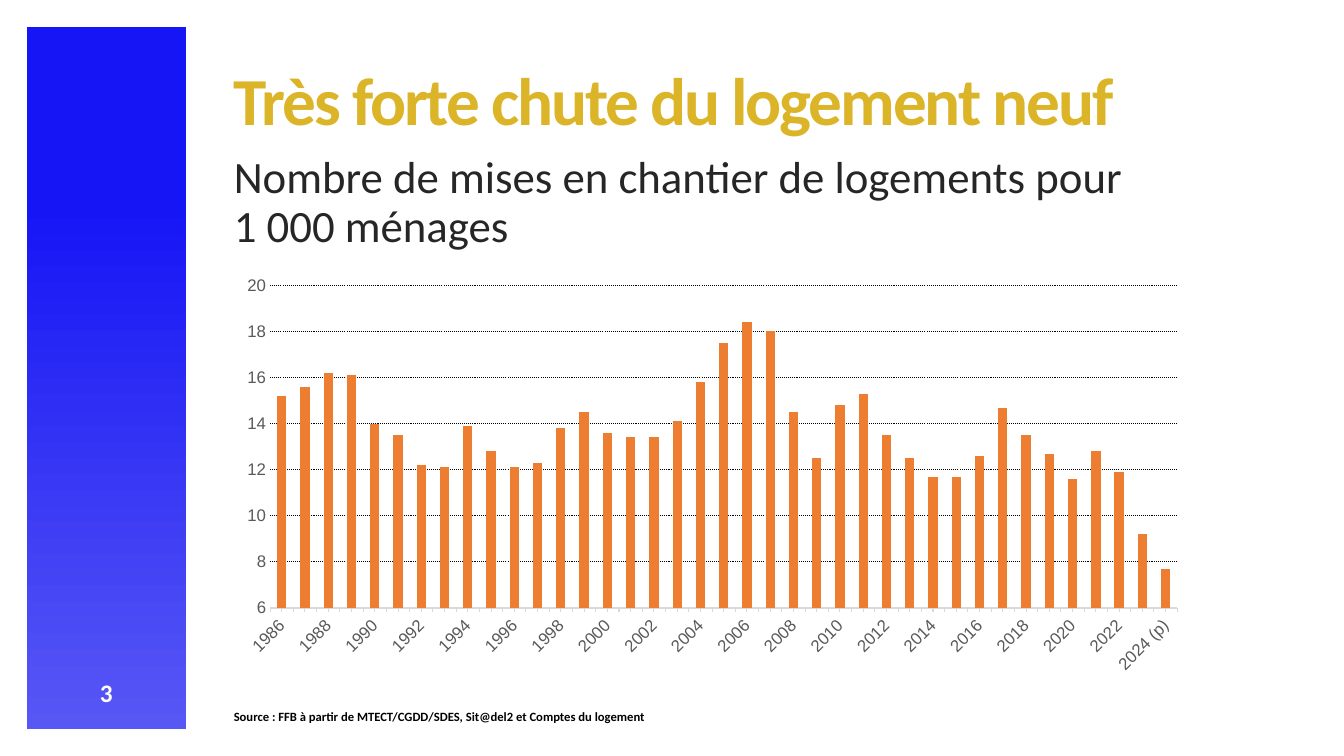
from pptx import Presentation
from pptx import util as u
from pptx.chart.data import CategoryChartData
from pptx.dml.color import RGBColor
from pptx.enum import chart as charts, dml, shapes, text
from pptx.oxml import parse_xml
from pptx.oxml.ns import nsdecls

PX = 9144  # EMU, 100 px to the inch

WHITE = RGBColor(0xFF, 0xFF, 0xFF)
BLACK = RGBColor(0x00, 0x00, 0x00)
BLUE = RGBColor(0x16, 0x15, 0xF5)
LIGHT_BLUE = RGBColor(0x57, 0x57, 0xF5)
GOLD = RGBColor(0xDB, 0xB4, 0x28)
INK = RGBColor(0x26, 0x26, 0x26)
GREY = RGBColor(0x59, 0x59, 0x59)
PALE_GREY = RGBColor(0xD9, 0xD9, 0xD9)
ORANGE = RGBColor(0xED, 0x7D, 0x31)

YEARS = [str(year) for year in range(1986, 2023)] + ["2023 (e)", "2024 (p)"]
STARTS = [
    15.2, 15.6, 16.2, 16.1, 14, 13.5, 12.2, 12.1, 13.9, 12.8,
    12.1, 12.3, 13.8, 14.5, 13.6, 13.4, 13.4, 14.1, 15.8, 17.5,
    18.4, 18, 14.5, 12.5, 14.8, 15.3, 13.5, 12.5, 11.7, 11.7,
    12.6, 14.7, 13.5, 12.7, 11.6, 12.8, 11.9, 9.2, 7.7,
]


def place(*lengths):
    return [u.Emu(length * PX) for length in lengths]


def add_text(page, wording, at, size, color, bold=False, spacing=0,
             line_spacing=0.9, align=text.PP_ALIGN.LEFT):
    box = page.shapes.add_textbox(*place(*at))
    box.text_frame.word_wrap = True
    para = box.text_frame.paragraphs[0]
    para.alignment = align
    para.line_spacing = line_spacing
    span = para.add_run()
    span.text = wording
    font = span.font
    font.name, font.size, font.bold = "Calibri", u.Pt(size), bold
    font.color.rgb = color
    if spacing:
        font._element.set("spc", str(int(spacing * 100)))


def add_gradient_band(page, at, top_color, bottom_color):
    band = page.shapes.add_shape(shapes.MSO_SHAPE.RECTANGLE, *place(*at))
    band.shadow.inherit = False
    band.line.fill.background()
    band.fill.gradient()
    band.fill.gradient_angle = 270
    stops = zip(band.fill.gradient_stops, (0.25, 1), (top_color, bottom_color))
    for stop, position, color in stops:
        stop.position = position
        stop.color.rgb = color


def style_axis(axis):
    axis.major_tick_mark = charts.XL_TICK_MARK.NONE
    font = axis.tick_labels.font
    font.name, font.size, font.color.rgb = "Arial", u.Pt(12), GREY


def set_plot_layout(chart, x, y, w, h):
    plot_area = chart._chartSpace.xpath("c:chart/c:plotArea")[0]
    for layout in plot_area.xpath("c:layout"):
        plot_area.remove(layout)
    sizes = "".join(f'<c:{name} val="{value}"/>'
                    for name, value in zip("xywh", (x, y, w, h)))
    plot_area.insert(0, parse_xml(
        f'<c:layout {nsdecls("c")}><c:manualLayout><c:layoutTarget val="inner"/>'
        f'<c:xMode val="edge"/><c:yMode val="edge"/>{sizes}'
        '</c:manualLayout></c:layout>'))


def add_column_chart(page, at, categories, name, values):
    data = CategoryChartData()
    data.categories = categories
    data.add_series(name, values)
    chart = page.shapes.add_chart(
        charts.XL_CHART_TYPE.COLUMN_CLUSTERED, *place(*at), data).chart
    chart.has_legend = False
    chart.has_title = False
    chart.font.name, chart.font.size = "Calibri", u.Pt(10)
    chart.font.color.rgb = BLACK
    set_plot_layout(chart, 0.047, 0.051, 0.922, 0.736)

    # Columns
    plot = chart.plots[0]
    plot.gap_width = 150
    plot.vary_by_categories = False
    fill = plot.series[0].format.fill
    fill.solid()
    fill.fore_color.rgb = ORANGE

    # Year axis: slanted labels, every second year
    years = chart.category_axis
    style_axis(years)
    years.minor_tick_mark = charts.XL_TICK_MARK.OUTSIDE
    years.format.line.color.rgb = PALE_GREY
    years.format.line.width = u.Pt(0.75)
    years._element.xpath("c:txPr/a:bodyPr")[0].set("rot", "-2700000")
    years._element.xpath("c:noMultiLvlLbl")[0].addprevious(
        parse_xml(f'<c:tickLblSkip {nsdecls("c")} val="2"/>'))

    # Value axis: dotted grid
    scale = chart.value_axis
    style_axis(scale)
    scale.minimum_scale, scale.maximum_scale, scale.major_unit = 6, 20, 2
    scale.tick_labels.number_format = "#,##0"
    scale.tick_labels.number_format_is_linked = False
    scale.format.line.fill.background()
    grid = scale.major_gridlines.format.line
    grid.color.rgb = BLACK
    grid.width = u.Pt(0.75)
    grid.dash_style = dml.MSO_LINE.ROUND_DOT


def main():
    deck = Presentation()
    deck.slide_width, deck.slide_height = place(1333, 750)
    page = deck.slides.add_slide(deck.slide_layouts[6])

    # Side band with page number
    add_gradient_band(page, (27, 27, 158, 696), BLUE, LIGHT_BLUE)
    add_text(page, "3", (27, 667, 157, 40), 18, WHITE, bold=True,
             line_spacing=1, align=text.PP_ALIGN.CENTER)

    # Headings
    add_text(page, "Très forte chute du logement neuf",
             (222, 62, 1066, 83), 48, GOLD, bold=True, spacing=-1.5)
    add_text(page, "Nombre de mises en chantier de logements pour 1 000 ménages",
             (222, 149, 919, 50), 32, INK)

    # Chart and its source
    add_column_chart(page, (222, 261, 976, 435), YEARS,
                     "Mises en chantier pour 1 000 ménages", STARTS)
    add_text(page,
             "Source : FFB à partir de MTECT/CGDD/SDES, Sit@del2 et Comptes du logement",
             (222, 700, 898, 24), 9, BLACK, bold=True)

    deck.save("out.pptx")


if __name__ == "__main__":
    main()
